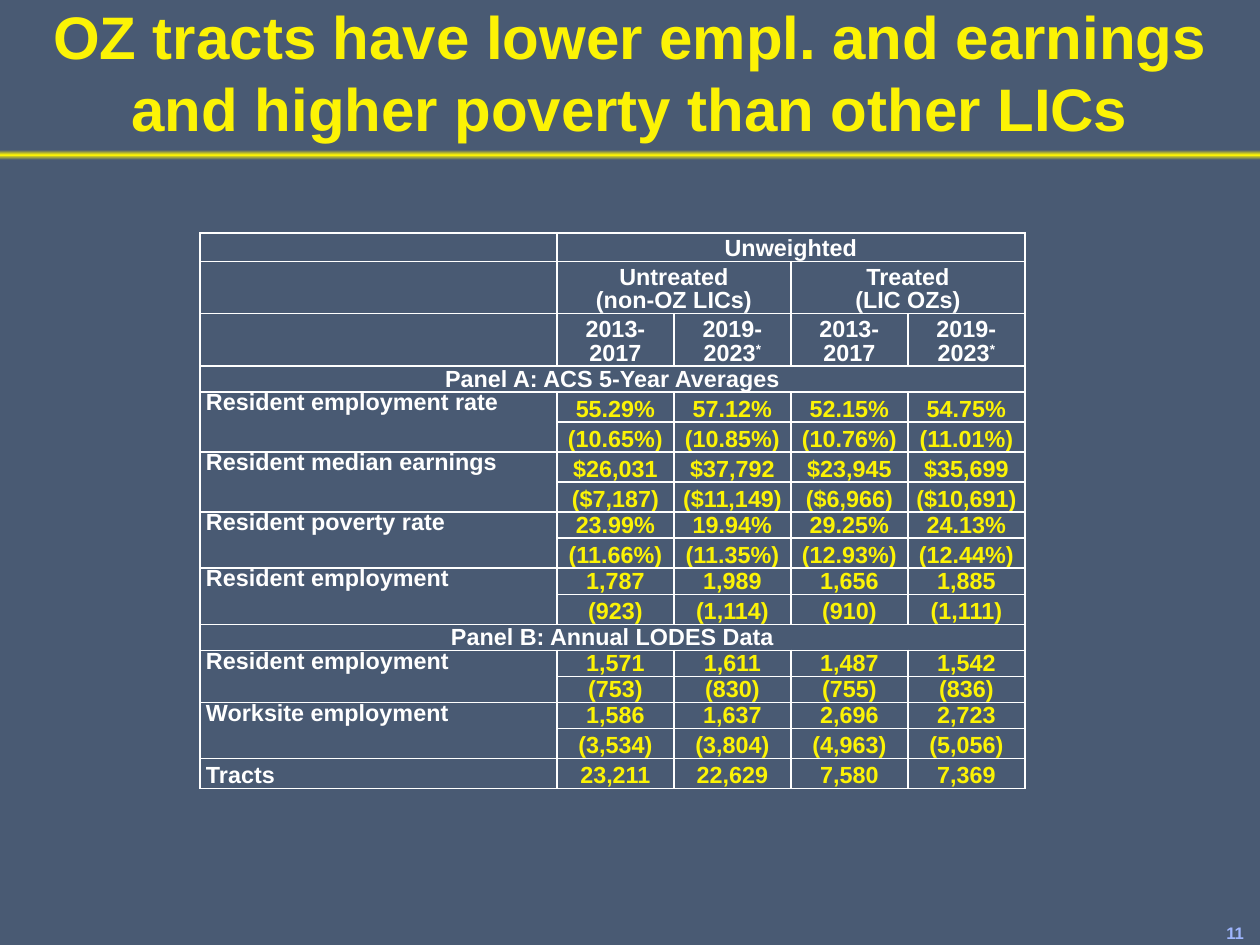
from copy import deepcopy

from lxml import etree
from pptx import Presentation
from pptx.dml.color import RGBColor
from pptx.enum.shapes import MSO_SHAPE
from pptx.enum.text import MSO_ANCHOR, PP_ALIGN
from pptx.oxml.ns import qn
from pptx.util import Pt

SLATE = RGBColor(0x49, 0x5A, 0x73)
YELLOW = RGBColor(0xFC, 0xF3, 0x05)
WHITE = RGBColor(0xFF, 0xFF, 0xFF)
PALE_BLUE = RGBColor(0x9F, 0xB6, 0xFF)
LEFT, CENTER = PP_ALIGN.LEFT, PP_ALIGN.CENTER
TOP, BOTTOM = MSO_ANCHOR.TOP, MSO_ANCHOR.BOTTOM
TITLE_ONLY = 5


def write_text(frame, text, size=14, color=WHITE, align=CENTER, spacing=0.9):
    """Write one paragraph per line; a closing asterisk is raised."""
    for index, line in enumerate(text.split("\n")):
        paragraph = frame.add_paragraph() if index else frame.paragraphs[0]
        paragraph.alignment = align
        paragraph.line_spacing = spacing
        body = line.rstrip("*")
        for part in filter(None, (body, line[len(body):])):
            run = paragraph.add_run()
            run.text = part
            run.font.name = "Arial"
            run.font.size = Pt(size)
            run.font.bold = True
            run.font.color.rgb = color
            if part == "*":
                run._r.get_or_add_rPr().set("baseline", "30000")
        if not line:
            etree.SubElement(paragraph._p, qn("a:endParaRPr"), sz=str(size * 100))


def add_borders(cell, color, width):
    properties = cell._tc.get_or_add_tcPr()
    for position, side in enumerate(("a:lnL", "a:lnR", "a:lnT", "a:lnB")):
        line = etree.Element(qn(side), w=str(Pt(width)))
        fill = etree.SubElement(line, qn("a:solidFill"))
        etree.SubElement(fill, qn("a:srgbClr"), val=str(color))
        properties.insert(position, line)


presentation = Presentation()
presentation.slide_width = Pt(756)
presentation.slide_height = Pt(567)
slide = presentation.slides.add_slide(presentation.slide_layouts[TITLE_ONLY])
slide.background.fill.solid()
slide.background.fill.fore_color.rgb = SLATE

# Title
title = slide.shapes.title
title.left, title.top, title.width, title.height = Pt(0), Pt(0), Pt(756), Pt(90)
title.text_frame.word_wrap = True
title.text_frame.vertical_anchor = BOTTOM
write_text(title.text_frame,
           "OZ tracts have lower empl. and earnings and higher poverty than other LICs",
           size=36, color=YELLOW, spacing=1.0)

# Glowing rule under the title
rule = slide.shapes.add_shape(MSO_SHAPE.RECTANGLE, Pt(0), Pt(90), Pt(756), Pt(6))
rule.shadow.inherit = False
rule.line.fill.background()
rule.fill.gradient()
rule.fill.gradient_angle = 90
first_stop = rule.element.find(".//" + qn("a:gs"))
first_stop.addnext(deepcopy(first_stop))
for stop, position, color in zip(rule.fill.gradient_stops, (0, 0.5, 1), (SLATE, YELLOW, SLATE)):
    stop.position = position
    stop.color.rgb = color

# Table
ROWS = [
    ["", "Unweighted", "", "", ""],
    ["", "Untreated\n(non-OZ LICs)", "", "Treated\n(LIC OZs)", ""],
    ["", "2013-2017", "2019-2023*", "2013-2017", "2019-2023*"],
    ["Panel A: ACS 5-Year Averages", "", "", "", ""],
    ["Resident employment rate", "55.29%", "57.12%", "52.15%", "54.75%"],
    ["", "(10.65%)", "(10.85%)", "(10.76%)", "(11.01%)"],
    ["Resident median earnings", "$26,031", "$37,792", "$23,945", "$35,699"],
    ["", "($7,187)", "($11,149)", "($6,966)", "($10,691)"],
    ["Resident poverty rate", "23.99%", "19.94%", "29.25%", "24.13%"],
    ["", "(11.66%)", "(11.35%)", "(12.93%)", "(12.44%)"],
    ["Resident employment", "1,787", "1,989", "1,656", "1,885"],
    ["", "(923)", "(1,114)", "(910)", "(1,111)"],
    ["Panel B: Annual LODES Data", "", "", "", ""],
    ["Resident employment", "1,571", "1,611", "1,487", "1,542"],
    ["", "(753)", "(830)", "(755)", "(836)"],
    ["Worksite employment", "1,586", "1,637", "2,696", "2,723"],
    ["", "(3,534)", "(3,804)", "(4,963)", "(5,056)"],
    ["Tracts", "23,211", "22,629", "7,580", "7,369"],
]
HEADER_ROWS = 3
PANEL_ROWS = (3, 12)
PAIRED_ROWS = (4, 6, 8, 10, 13, 15)
TWO_LINE_ROWS = (1, 2)
TALL_ROWS = (4, 5, 6, 7, 9, 11, 16, 17)
COLUMN_WIDTHS = [214.2] + [70.2] * 4

table_frame = slide.shapes.add_table(len(ROWS), len(COLUMN_WIDTHS), Pt(120), Pt(139.7),
                                     Pt(sum(COLUMN_WIDTHS)), Pt(333))
table = table_frame.table
table.first_row = False
table.horz_banding = False
for column, width in zip(table.columns, COLUMN_WIDTHS):
    column.width = Pt(width)

for row_index, values in enumerate(ROWS):
    if row_index in TWO_LINE_ROWS:
        height = 31.4
    else:
        height = 18 if row_index in TALL_ROWS else 15.7
    table.rows[row_index].height = Pt(height)
    for column_index, value in enumerate(values):
        cell = table.cell(row_index, column_index)
        is_label = column_index == 0 and row_index not in PANEL_ROWS
        is_value = column_index > 0 and row_index > HEADER_ROWS
        cell.fill.background()
        cell.margin_left = cell.margin_right = Pt(3.6)
        cell.margin_top = cell.margin_bottom = Pt(0)
        cell.vertical_anchor = TOP if is_label and row_index in PAIRED_ROWS else BOTTOM
        write_text(cell.text_frame, value, color=YELLOW if is_value else WHITE,
                   align=LEFT if is_label else CENTER)
        add_borders(cell, WHITE, 1)

merges = [(0, 1, 0, 4), (1, 1, 1, 2), (1, 3, 1, 4)]
merges += [(row, 0, row, 4) for row in PANEL_ROWS]
merges += [(row, 0, row + 1, 0) for row in PAIRED_ROWS]
for top, left, bottom, right in merges:
    table.cell(top, left).merge(table.cell(bottom, right))

# Slide number
number_box = slide.shapes.add_textbox(Pt(730.8), Pt(550.8), Pt(25.2), Pt(16.2))
number_frame = number_box.text_frame
number_frame.word_wrap = False
number_frame.margin_left = number_frame.margin_right = Pt(5)
number_frame.margin_top = number_frame.margin_bottom = Pt(2.2)
write_text(number_frame, "11", size=10, color=PALE_BLUE, align=LEFT, spacing=1.04)

presentation.save("out.pptx")
